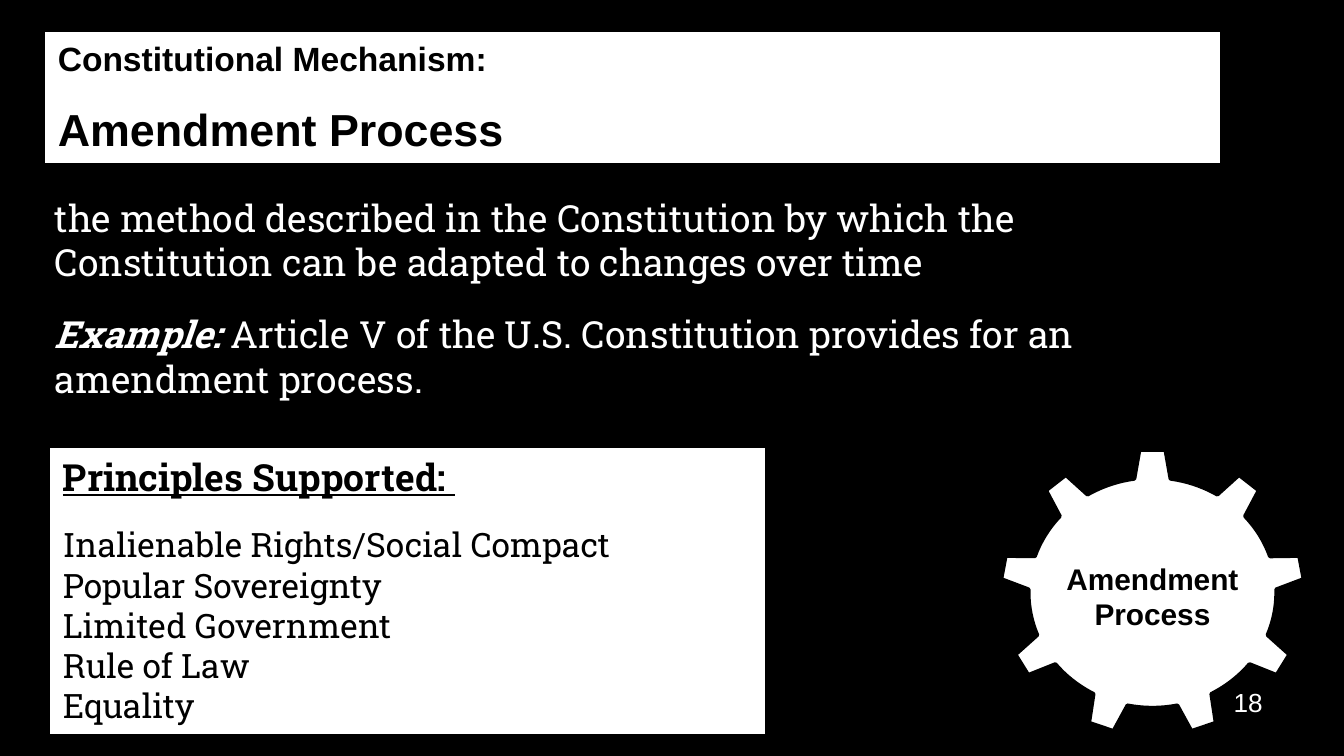
from pptx import Presentation
from pptx.dml.color import RGBColor
from pptx.enum.shapes import MSO_SHAPE
from pptx.enum.text import MSO_ANCHOR, MSO_AUTO_SIZE, PP_ALIGN
from pptx.util import Inches, Pt

BLACK = RGBColor(0x00, 0x00, 0x00)
WHITE = RGBColor(0xFF, 0xFF, 0xFF)
HEADING_FONT = "Arial"
BODY_FONT = "Roboto Slab"
LEFT, CENTER = PP_ALIGN.LEFT, PP_ALIGN.CENTER
TOP = MSO_ANCHOR.TOP
NO_AUTOFIT = MSO_AUTO_SIZE.NONE
RECTANGLE, GEAR = MSO_SHAPE.RECTANGLE, MSO_SHAPE.GEAR_9
TITLE_ONLY = 5

PRINCIPLES = [
    "Inalienable Rights/Social Compact",
    "Popular Sovereignty",
    "Limited Government",
    "Rule of Law",
    "Equality",
]


def add_run(paragraph, text, size, font=BODY_FONT, color=WHITE,
            bold=False, italic=False, underline=False):
    """Append one formatted run to a paragraph."""
    run = paragraph.add_run()
    run.text = text
    run.font.size = Pt(size)
    run.font.name = font
    run.font.color.rgb = color
    run.font.bold = bold
    run.font.italic = italic
    run.font.underline = underline


def add_line(frame, text, size, space_before=0, align=LEFT, **style):
    """Add a paragraph, using the empty first one if there is one."""
    first = frame.paragraphs[0]
    paragraph = frame.add_paragraph() if first.runs else first
    paragraph.alignment = align
    paragraph.space_before = Pt(space_before)
    add_run(paragraph, text, size, **style)
    return paragraph


def prepare_frame(shape):
    """Give a shape a wrapping, top-anchored text frame and return it."""
    frame = shape.text_frame
    frame.auto_size = NO_AUTOFIT
    frame.word_wrap = True
    frame.vertical_anchor = TOP
    return frame


def paint_panel(shape, line_width):
    """Fill a shape white with a black outline."""
    shape.fill.solid()
    shape.fill.fore_color.rgb = WHITE
    shape.line.color.rgb = BLACK
    shape.line.width = Pt(line_width)


def add_panel(slide, kind, left, top, width, height, line_width):
    """Add a white preset shape without a shadow."""
    shape = slide.shapes.add_shape(
        kind, Inches(left), Inches(top), Inches(width), Inches(height))
    shape.shadow.inherit = False
    paint_panel(shape, line_width)
    return shape


def add_text_area(slide, left, top, width, height):
    """Add a text box and return its text frame."""
    return prepare_frame(slide.shapes.add_textbox(
        Inches(left), Inches(top), Inches(width), Inches(height)))


def place_title(slide, left, top, width, height):
    """Place the two-line title on its white banner."""
    title = slide.shapes.title
    title.left, title.top = Inches(left), Inches(top)
    title.width, title.height = Inches(width), Inches(height)
    paint_panel(title, 0.75)
    frame = prepare_frame(title)
    style = dict(font=HEADING_FONT, color=BLACK, bold=True)
    add_line(frame, "Constitutional Mechanism:", 18, **style)
    add_line(frame, "Amendment Process", 24, space_before=12.5, **style)


def place_definition(slide, left, top, width, height):
    """Place the definition and its example."""
    frame = add_text_area(slide, left, top, width, height)
    add_line(frame, "the method described in the Constitution by which the "
                    "Constitution can be adapted to changes over time", 20)
    example = add_line(frame, "Example: ", 20, space_before=14.5,
                       bold=True, italic=True)
    add_run(example, "Article V of the U.S. Constitution provides for an "
                     "amendment process.", 20)


def place_principles(slide, left, top, width, height):
    """Place the panel that lists the principles supported."""
    panel = add_panel(slide, RECTANGLE, left, top, width, height, 0.75)
    frame = prepare_frame(panel)
    add_line(frame, "Principles Supported: ", 20, color=BLACK,
             bold=True, underline=True)
    for index, principle in enumerate(PRINCIPLES):
        add_line(frame, principle, 18, color=BLACK,
                 space_before=0 if index else 13.5)


def place_gear(slide, left, top, width, height):
    """Place the gear with its label centred across it."""
    add_panel(slide, GEAR, left, top, width, height, 2)
    label_width = 1.77
    frame = add_text_area(slide, left + (width - label_width) / 2, top + 0.78,
                          label_width, 0.64)
    add_line(frame, "Amendment Process", 16, align=CENTER,
             font=HEADING_FONT, color=BLACK, bold=True)


def place_page_number(slide, left, top, width, height):
    """Place the page number."""
    frame = add_text_area(slide, left, top, width, height)
    add_line(frame, "18", 14, font=HEADING_FONT)


def main():
    """Build the slide and save the presentation."""
    presentation = Presentation()
    presentation.slide_width = Inches(10)
    presentation.slide_height = presentation.slide_width * 9 // 16
    slide = presentation.slides.add_slide(presentation.slide_layouts[TITLE_ONLY])
    slide.background.fill.solid()
    slide.background.fill.fore_color.rgb = BLACK
    place_title(slide, 0.33, 0.23, 8.75, 0.99)
    place_definition(slide, 0.31, 1.4, 8.5, 1.68)
    place_principles(slide, 0.37, 3.33, 5.33, 2.14)
    place_gear(slide, 7.44, 3.34, 2.27, 2.14)
    place_page_number(slide, 9.08, 5.06, 0.58, 0.34)
    presentation.save("out.pptx")


if __name__ == "__main__":
    main()
